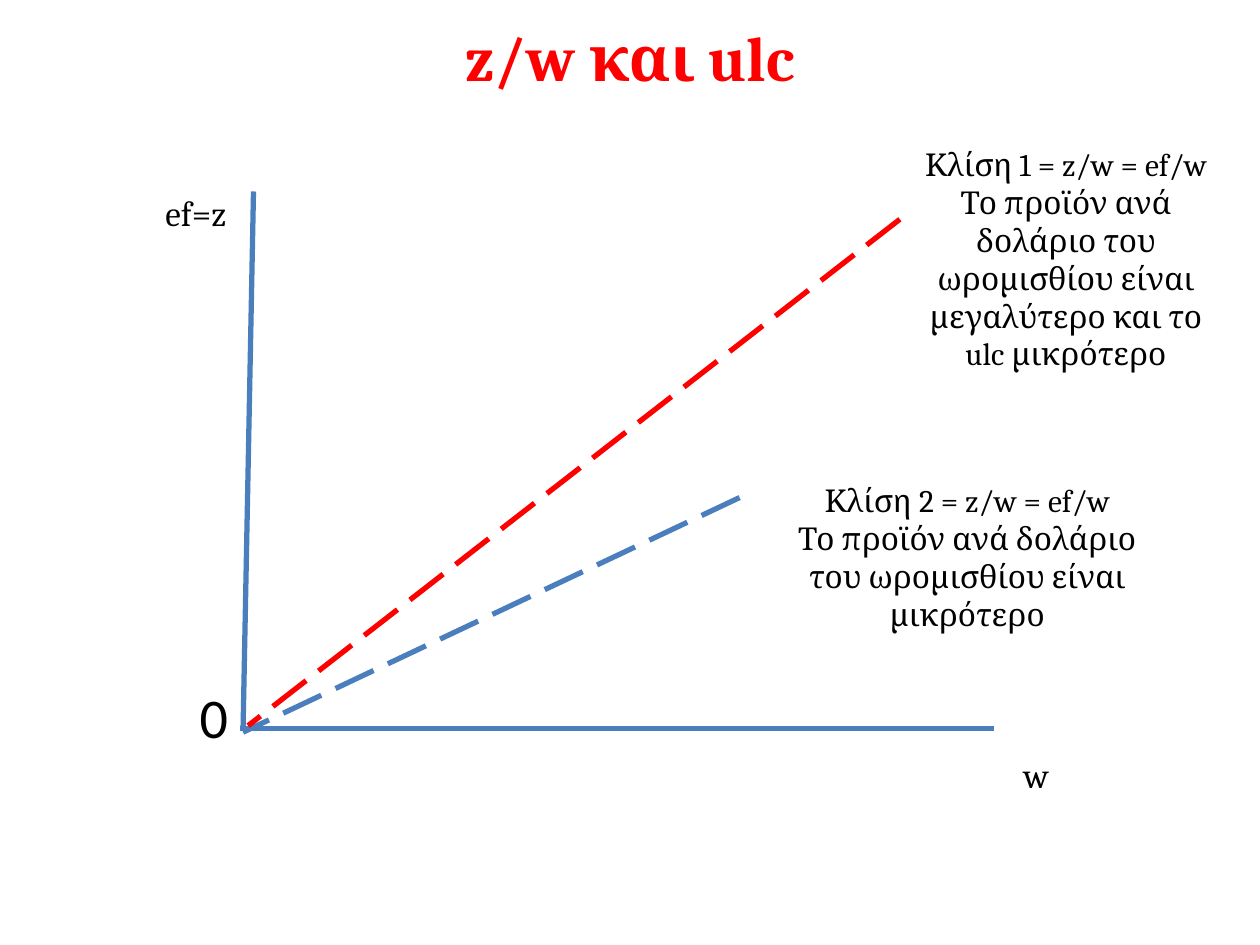
import lxml.etree
import pptx
import pptx.dml.color
import pptx.enum.dml
import pptx.enum.shapes
import pptx.enum.text
import pptx.oxml.ns
import pptx.util
from pptx.util import Cm

COLOURS = {"white": "FFFFFF", "black": "000000", "red": "FF0000", "blue": "4B7EBC"}


def colour(name):
    return pptx.dml.color.RGBColor.from_string(COLOURS[name])


def format_text(shape, text, size, font="Cambria", colour_name="black", bold=False):
    frame = shape.text_frame
    frame.text = text
    frame.word_wrap = True
    frame.auto_size = pptx.enum.text.MSO_AUTO_SIZE.NONE
    frame.vertical_anchor = pptx.enum.text.MSO_ANCHOR.MIDDLE
    for paragraph in frame.paragraphs:
        paragraph.alignment = pptx.enum.text.PP_ALIGN.CENTER
        for run in paragraph.runs:
            run.font.name = font
            run.font.size = pptx.util.Pt(size)
            run.font.bold = bold
            run.font.color.rgb = colour(colour_name)


def place(shape, left, top, width, height):
    shape.left, shape.top = Cm(left), Cm(top)
    shape.width, shape.height = Cm(width), Cm(height)


def fill_title(slide):
    title = slide.shapes.title
    place(title, 1.27, 0.33, 22.86, 1.6)
    format_text(title, "z/w και ulc", 36, colour_name="red", bold=True)


def fill_origin(slide):
    origin = slide.placeholders[1]
    place(origin, 3.56, 13.69, 1.5, 1.5)
    format_text(origin, "0", 32, font="Calibri")
    paragraph = origin.text_frame.paragraphs[0]
    paragraph.space_before = pptx.util.Pt(0)
    properties = paragraph._p.get_or_add_pPr()
    properties.set("marL", "0")
    properties.set("indent", "0")
    lxml.etree.SubElement(properties, pptx.oxml.ns.qn("a:buNone"))


def add_line(slide, start, end, colour_name="blue", dashed=False):
    line = slide.shapes.add_connector(
        pptx.enum.shapes.MSO_CONNECTOR.STRAIGHT, *map(Cm, start + end)
    )
    line.line.color.rgb = colour(colour_name)
    line.line.width = pptx.util.Pt(3)
    if dashed:
        line.line.dash_style = pptx.enum.dml.MSO_LINE.LONG_DASH
    lxml.etree.SubElement(line._element.spPr, pptx.oxml.ns.qn("a:effectLst"))


def add_label(slide, text, size, *box):
    label = slide.shapes.add_shape(
        pptx.enum.shapes.MSO_SHAPE.RECTANGLE, *map(Cm, box)
    )
    label.shadow.inherit = False
    label.fill.solid()
    label.fill.fore_color.rgb = colour("white")
    label.line.fill.background()
    format_text(label, text, size)


def main():
    presentation = pptx.Presentation()
    presentation.slide_width, presentation.slide_height = Cm(25.4), Cm(19.05)
    slide = presentation.slides.add_slide(presentation.slide_layouts[1])

    fill_title(slide)
    fill_origin(slide)

    add_line(slide, (5.11, 3.86), (4.9, 14.68))
    add_line(slide, (20.04, 14.68), (4.83, 14.68))
    add_line(slide, (14.91, 10.03), (4.9, 14.76), dashed=True)
    add_line(slide, (18.14, 4.42), (5, 14.63), "red", dashed=True)

    add_label(slide, "ef=z", 20, 2.9, 3.86, 2.1, 0.86)
    add_label(slide, "w", 20, 20.09, 15.11, 1.6, 1)
    add_label(
        slide,
        "Κλίση 1 = z/w = ef/w\n"
        "Το προϊόν ανά δολάριο του ωρομισθίου είναι μεγαλύτερο και το ulc μικρότερο",
        18, 18.29, 2.92, 6.4, 4.6,
    )
    add_label(
        slide,
        "Κλίση 2 = z/w = ef/w\n"
        "Το προϊόν ανά δολάριο του ωρομισθίου είναι μικρότερο",
        18, 15.7, 9.73, 7.6, 3,
    )

    presentation.save("out.pptx")


if __name__ == "__main__":
    main()
